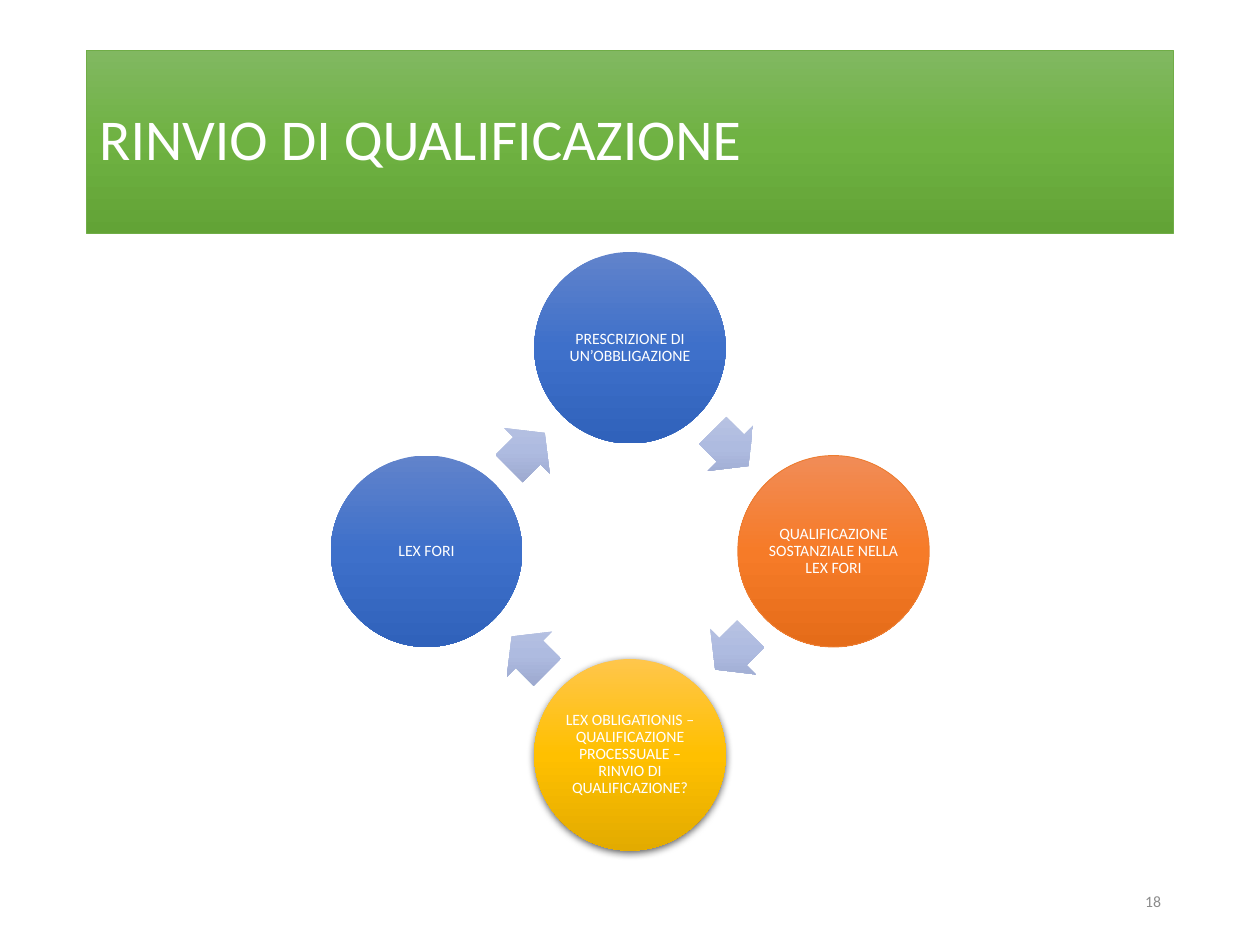
import copy
import math
from dataclasses import dataclass

import lxml.etree
import pptx
import pptx.dml.color
import pptx.enum.shapes
import pptx.enum.text
import pptx.oxml.ns
import pptx.util

Pt = pptx.util.Pt
qn = pptx.oxml.ns.qn
Shape = pptx.enum.shapes.MSO_SHAPE
Align = pptx.enum.text.PP_ALIGN
Middle = pptx.enum.text.MSO_ANCHOR.MIDDLE


@dataclass(frozen=True)
class Theme:
    font: str = "Calibri"
    head: float = 33
    body: float = 9
    white: str = "FFFFFF"
    gray: str = "8C8C8C"
    green: tuple = ("81B861", "6FB242", "62A336")
    blue: tuple = ("6183CB", "3E70CA", "3062BB")
    orange: tuple = ("F18C57", "F67B28", "E56C19")
    gold: tuple = ("FFC64B", "FFC000", "E3AB00")
    pale: tuple = ("BBC5E3", "AEBBE0", "98A4CB")
    green_edge: str = "70AD47"
    orange_edge: str = "ED7D31"


theme = Theme()


def color(code):
    return pptx.dml.color.RGBColor.from_string(code)


def shade(shape, tones, edge=None):
    """Fill from top to bottom with three tones, and set the outline."""
    fill = shape.fill
    fill.gradient()
    fill.gradient_angle = 270
    grad = shape.element.spPr.find(qn("a:gradFill"))
    grad.set("rotWithShape", "0")
    stops = grad.find(qn("a:gsLst"))
    stops.insert(1, copy.deepcopy(stops[0]))
    for stop, place, tone in zip(fill.gradient_stops, (0, 0.5, 1), tones):
        stop.position = place
        stop.color.rgb = color(tone)
    if edge:
        shape.line.color.rgb = color(edge)
        shape.line.width = Pt(0.5)
    else:
        shape.line.fill.background()


def write(shape, text, size, ink, align, gap=0.9):
    frame = shape.text_frame
    frame.word_wrap = True
    frame.vertical_anchor = Middle
    frame.text = text
    para = frame.paragraphs[0]
    para.alignment = align
    para.line_spacing = gap
    para.font.name = theme.font
    para.font.size = Pt(size)
    para.font.color.rgb = color(ink)
    return frame


def place(shape, box):
    shape.left, shape.top, shape.width, shape.height = map(Pt, box)


def add_glow(shape):
    """Soft shadow straight below the shape."""
    effects = shape.element.spPr.find(qn("a:effectLst"))
    outer = lxml.etree.SubElement(
        effects, qn("a:outerShdw"), blurRad=str(Pt(4.5)), dist=str(Pt(1.5)),
        dir="5400000", algn="ctr", rotWithShape="0")
    tint = lxml.etree.SubElement(outer, qn("a:srgbClr"), val="000000")
    lxml.etree.SubElement(tint, qn("a:alpha"), val="63000")


def add_title(slide, box):
    title = slide.shapes.title
    place(title, box)
    shade(title, theme.green, theme.green_edge)
    write(title, "RINVIO DI QUALIFICAZIONE", theme.head, theme.white, Align.LEFT)


def add_cycle(slide, box, steps):
    """Circles clockwise from the top, with an arrow after each one."""
    left, top, width, height = box
    mid_x, mid_y = left + width / 2, top + height / 2
    size = 109.4
    ring = (height - size) / 2
    long, wide = 28.8, 36.7
    back = 1  # arrows sit slightly behind the midpoint
    turn = 360 / len(steps)

    def add(kind, x, y, w, h):
        shape = slide.shapes.add_shape(
            kind, Pt(x - w / 2), Pt(y - h / 2), Pt(w), Pt(h))
        shape.shadow.inherit = False
        return shape

    for i, (text, tones, edge, glow) in enumerate(steps):
        # Circle
        angle = math.radians(i * turn)
        disc = add(Shape.OVAL, mid_x + ring * math.sin(angle),
                   mid_y - ring * math.cos(angle), size, size)
        shade(disc, tones, edge)
        frame = write(disc, text, theme.body, theme.white, Align.CENTER)
        frame.margin_left = frame.margin_right = Pt(0.7)
        frame.margin_top = frame.margin_bottom = Pt(0.7)
        if glow:
            add_glow(disc)

        # Arrow to the next circle
        angle = math.radians((i + 0.5) * turn)
        reach = ring * math.cos(math.radians(turn / 2))
        sin, cos = math.sin(angle), math.cos(angle)
        arrow = add(Shape.RIGHT_ARROW, mid_x + reach * sin - back * cos,
                    mid_y - reach * cos - back * sin, long, wide)
        arrow.rotation = (i + 0.5) * turn
        arrow.adjustments[0] = 0.6
        arrow.adjustments[1] = 0.5
        shade(arrow, theme.pale)


def add_number(slide, box, text):
    note = slide.shapes.add_textbox(*map(Pt, box))
    write(note, text, theme.body, theme.gray, Align.RIGHT, 1.0)


def main():
    deck = pptx.Presentation()
    deck.slide_width, deck.slide_height = Pt(720), Pt(540)
    slide = deck.slides.add_slide(deck.slide_layouts[5])
    steps = [
        ("PRESCRIZIONE DI UN’OBBLIGAZIONE", theme.blue, None, False),
        ("QUALIFICAZIONE SOSTANZIALE NELLA LEX FORI",
         theme.orange, theme.orange_edge, False),
        ("LEX OBLIGATIONIS – QUALIFICAZIONE PROCESSUALE – "
         "RINVIO DI QUALIFICAZIONE?", theme.gold, None, True),
        ("LEX FORI", theme.blue, None, False),
    ]
    add_title(slide, (49.5, 28.75, 621, 104.4))
    add_cycle(slide, (49.5, 144, 621, 342), steps)
    add_number(slide, (508.5, 500.5, 162, 28.75), "18")
    deck.save("out.pptx")


if __name__ == "__main__":
    main()
